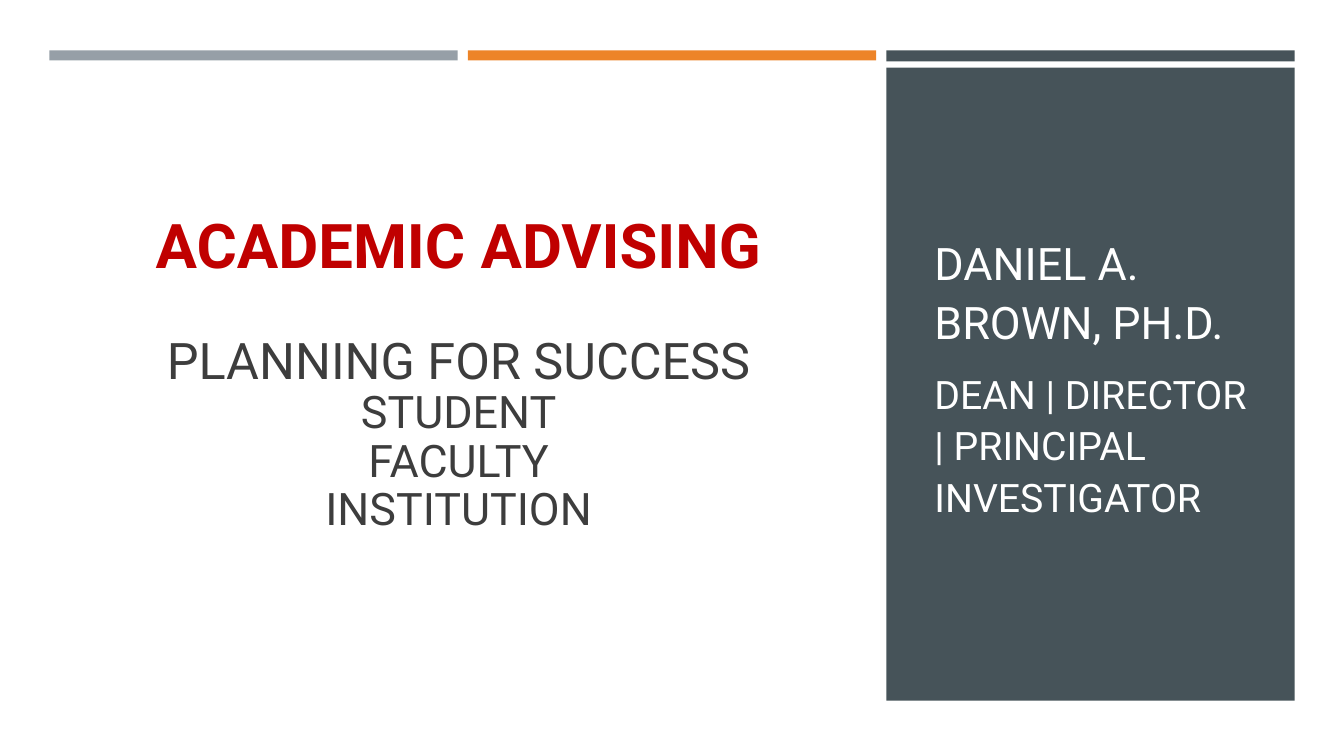
"""Build the opening slide of a talk on academic advising."""
from pptx import Presentation
from pptx.dml.color import RGBColor
from pptx.enum.shapes import MSO_SHAPE
from pptx.enum.text import MSO_ANCHOR, PP_ALIGN
from pptx.util import Inches, Pt

RECT = MSO_SHAPE.RECTANGLE
MIDDLE = MSO_ANCHOR.MIDDLE
LEFT, CENTER = PP_ALIGN.LEFT, PP_ALIGN.CENTER
FONT = "Roboto"
GRAY, ORANGE, SLATE = "969FA7", "ED8428", "465359"
RED, DARK, WHITE = "C00000", "3D3D3D", "FFFFFF"
MARGIN, COL_W, GAP = 0.49, 4.05, 0.1
PITCH = COL_W + GAP
BAR_TOP, PANEL_TOP, PANEL_H = 0.5, 0.67, 6.28
TEXT_TOP, TEXT_H = 1.1, 5.25


def color(value):
    return RGBColor.from_string(value)


def add_text(left, width, align, spacing, lines):
    tb = s.shapes.add_textbox(Inches(left), Inches(TEXT_TOP), Inches(width), Inches(TEXT_H))
    tf = tb.text_frame
    tf.word_wrap = True
    tf.vertical_anchor = MIDDLE
    for i, (text, size, fill, bold, before, after) in enumerate(lines):
        p = tf.paragraphs[0] if i == 0 else tf.add_paragraph()
        p.text = text
        p.alignment = align
        p.line_spacing = spacing
        p.space_before, p.space_after = Pt(before), Pt(after)
        p.font.name, p.font.size, p.font.bold = FONT, Pt(size), bold
        p.font.color.rgb = color(fill)


prs = Presentation()
prs.slide_width, prs.slide_height = Inches(13.33), Inches(7.5)
s = prs.slides.add_slide(prs.slide_layouts[6])
s.background.fill.solid()
s.background.fill.fore_color.rgb = color(WHITE)

blocks = [(0, BAR_TOP, 0.1, GRAY), (1, BAR_TOP, 0.1, ORANGE),
          (2, BAR_TOP, 0.11, SLATE), (2, PANEL_TOP, PANEL_H, SLATE)]
for col, top, height, fill in blocks:
    sp = s.shapes.add_shape(RECT, Inches(MARGIN + col * PITCH), Inches(top),
                            Inches(COL_W), Inches(height))
    sp.shadow.inherit = False
    sp.fill.solid()
    sp.fill.fore_color.rgb = color(fill)
    sp.line.fill.background()

add_text(MARGIN, 8.12, CENTER, 0.9, [
    ("ACADEMIC ADVISING", 44, RED, True, 0, 38),
    ("PLANNING FOR SUCCESS", 36, DARK, False, 0, 0),
    ("STUDENT", 32, DARK, False, 0, 0),
    ("FACULTY", 32, DARK, False, 0, 0),
    ("INSTITUTION", 32, DARK, False, 0, 0),
])
add_text(9.17, 3.37, LEFT, 1.1, [
    ("DANIEL A. BROWN, PH.D.", 32, WHITE, False, 6.4, 6),
    ("DEAN | DIRECTOR | PRINCIPAL INVESTIGATOR", 28, WHITE, False, 5.6, 6),
])

prs.save("out.pptx")
